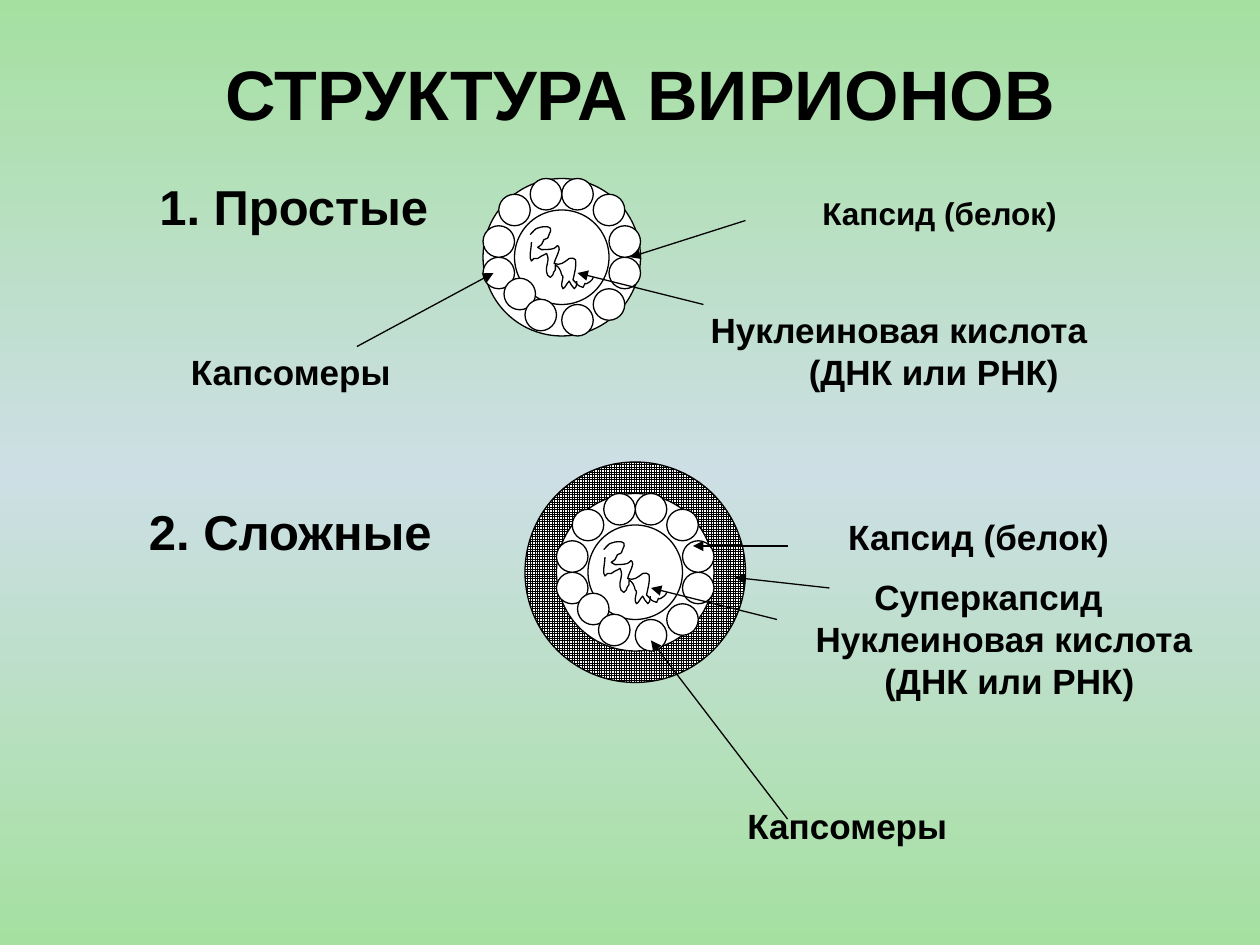
from copy import deepcopy

from lxml import etree
from pptx import Presentation
from pptx.dml.color import RGBColor
from pptx.enum.dml import MSO_PATTERN
from pptx.enum.shapes import MSO_CONNECTOR, MSO_SHAPE
from pptx.enum.text import MSO_ANCHOR, PP_ALIGN
from pptx.oxml.ns import qn
from pptx.util import Cm, Pt

OVAL, LINE = MSO_SHAPE.OVAL, MSO_CONNECTOR.STRAIGHT
GRID = MSO_PATTERN.SMALL_GRID
TOP, CENTER = MSO_ANCHOR.TOP, PP_ALIGN.CENTER
BLACK, WHITE = RGBColor(0, 0, 0), RGBColor(255, 255, 255)
GREEN, BLUE = RGBColor(0xA5, 0xE0, 0xA0), RGBColor(0xCD, 0xDF, 0xE5)
UNIT = 2.54 / 24  # one grid step in cm

TITLE = "СТРУКТУРА ВИРИОНОВ"
ACID, FORMS = "Нуклеиновая кислота", "(ДНК или РНК)"
CAPSID, PARTS = "Капсид (белок)", "Капсомеры"
# box, then lines of (left text, its size, offset, right text, its size)
LABELS = [
    ((28, 32.4, 194, 34.8), [("1. Простые", 28, 126.3, CAPSID, 18)]),
    ((34, 57.6, 186, 17.3), [("", 20, 99, ACID, 20), (PARTS, 20, 117.7, FORMS, 20)]),
    ((26, 94.3, 200, 26.6), [("2. Сложные", 28, 133.2, CAPSID, 20)]),
    ((140, 152, 52, 18.5), [(PARTS, 20, 0, "", 20)]),
    ((42, 108.5, 192, 41.5), [("", 20, 122.2, "Суперкапсид", 20),
                              ("", 20, 111, ACID, 20), ("", 20, 124.1, FORMS, 20)]),
]
# x and y of the start, then of the arrowhead
ARROWS = [
    (68, 66, 94, 52), (142, 42, 120, 49), (150, 104, 132, 104),
    (150, 156, 124, 122), (158, 112, 140, 110),
]
VIRIONS = [(92, 34), (106, 94)]
CAPSOMERES = [
    (0, 15), (4, 19), (8, 23), (24, 15), (24, 9), (21, 3),
    (15, 0), (9, 0), (3, 3), (0, 9), (15, 24), (21, 21),
]
# Bezier strands: a start, then two handles and an end for each curve
STRANDS = [
    [(0, 7), (6, 1), (3, 3), (9, 1), (11, 1), (14, 0), (16, 2),
     (17, 3), (16, 5), (15, 7), (14, 11), (13, 10), (11, 11),
     (10, 12), (10, 14), (9, 15), (6, 18), (4, 16), (9, 19),
     (12, 19), (16, 19), (19, 18), (21, 18), (21, 15), (22, 16),
     (23, 16), (23, 18), (23, 19), (22, 23), (20, 26), (19, 30),
     (24, 32), (27, 29), (31, 26), (33, 26), (35, 25), (36, 27),
     (37, 32), (35, 38), (34, 43), (40, 49), (37, 47), (42, 49),
     (46, 41), (40, 50), (48, 44), (49, 44), (50, 41), (50, 41)],
    [(1, 13), (1, 17), (0, 20), (0, 24), (0, 25), (0, 27), (1, 28),
     (1, 28), (2, 27), (3, 26), (4, 26), (5, 26), (6, 26),
     (8, 24), (10, 24), (13, 22), (15, 26), (14, 28), (13, 33),
     (13, 33), (12, 40), (16, 41), (16, 41), (17, 40), (18, 39),
     (18, 38), (19, 36), (20, 35), (20, 33), (20, 32), (20, 31),
     (23, 33), (24, 35), (25, 39), (26, 39), (26, 41), (26, 41),
     (26, 43), (25, 44), (25, 46), (25, 47), (25, 49), (26, 50),
     (27, 50), (28, 48), (28, 48), (29, 46), (31, 44), (31, 44),
     (32, 46), (33, 48), (35, 50), (36, 49), (37, 48), (37, 46),
     (37, 45), (37, 44), (37, 44)],
]


def grid(*steps):
    """Turn grid steps into lengths."""
    return [Cm(s * UNIT) for s in steps]


def style(item, **values):
    for name, value in values.items():
        setattr(item, name, value)


def ink(shape):
    shape.line.color.rgb = BLACK
    shape.line.width = Pt(0.75)


def disc(shapes, x, y, size):
    shape = shapes.add_shape(OVAL, *grid(x, y, size, size))
    shape.shadow.inherit = False
    shape.fill.solid()
    shape.fill.fore_color.rgb = WHITE
    ink(shape)
    return shape


def arrow(shapes, *ends):
    line = shapes.add_connector(LINE, *grid(*ends))
    ink(line)
    tip = etree.SubElement(line._element.spPr.find(qn("a:ln")), qn("a:tailEnd"))
    tip.set("type", "triangle")
    etree.SubElement(line._element.spPr, qn("a:effectLst"))


def strand(shapes, x, y, points):
    left, top = grid(x, y)
    nodes = [(left + Cm(px * 0.0254), top + Cm(py * 0.0254)) for px, py in points]
    pen = shapes.build_freeform(*nodes[0])
    pen.add_line_segments(nodes[1:], close=False)
    shape = pen.convert_to_shape()
    bend(shape)
    shape.shadow.inherit = False
    shape.fill.background()
    ink(shape)


def bend(shape):
    """Join each three line steps into one cubic curve."""
    steps = list(shape._element.iter(qn("a:lnTo")))
    for i in range(0, len(steps), 3):
        first, *rest = steps[i:i + 3]
        first.tag = qn("a:cubicBezTo")
        for step in rest:
            first.append(step[0])
            step.getparent().remove(step)


def virion(slide, x, y):
    shapes = slide.shapes.add_group_shape().shapes
    disc(shapes, x, y, 30)
    disc(shapes, x + 6, y + 6, 18)
    for points in STRANDS:
        strand(shapes, x + 9, y + 9, points)
    for dx, dy in CAPSOMERES:
        disc(shapes, x + dx, y + dy, 6)
    arrow(shapes, x + 42, y + 24, x + 18, y + 18)


def write(para, text, size):
    run = para.add_run()
    run.text = text
    style(run.font, name="Arial", size=Pt(size), bold=True)
    run.font.color.rgb = BLACK


def label(slide, place, lines):
    frame = slide.shapes.add_textbox(*grid(*place)).text_frame
    style(frame, word_wrap=True, vertical_anchor=TOP)
    for i, (left, size, gap, right, small) in enumerate(lines):
        para = frame.add_paragraph() if i else frame.paragraphs[0]
        props = para._p.get_or_add_pPr()
        offset = str(grid(gap)[0])
        if left and right:
            tabs = etree.SubElement(props, qn("a:tabLst"))
            etree.SubElement(tabs, qn("a:tab"), pos=offset, algn="l")
            write(para, left + "\t", size)
        elif left:
            write(para, left, size)
        else:
            props.set("marL", offset)
        if right:
            write(para, right, small)


def paint(slide):
    fill = slide.background.fill
    fill.gradient()
    fill.gradient_angle = 90
    first = slide._element.find(".//" + qn("a:gs"))
    first.addnext(deepcopy(first))
    for stop, place, color in zip(fill.gradient_stops, (0, 0.5, 1), (GREEN, BLUE, GREEN)):
        stop.position = place
        stop.color.rgb = color


def main():
    deck = Presentation()
    style(deck, slide_width=Cm(25.4), slide_height=Cm(19.05))
    slide = deck.slides.add_slide(deck.slide_layouts[5])
    paint(slide)

    title = slide.shapes.title
    left, top, width, height = grid(18, 8.4, 208, 34.3)
    style(title, left=left, top=top, width=width, height=height)
    title.text_frame.vertical_anchor = TOP
    para = title.text_frame.paragraphs[0]
    para.alignment = CENTER
    write(para, TITLE, 40)

    shell = disc(slide.shapes, 100, 88, 42)
    shell.fill.patterned()
    shell.fill.pattern = GRID
    shell.fill.fore_color.rgb = BLACK
    shell.fill.back_color.rgb = WHITE
    for spot in VIRIONS:
        virion(slide, *spot)
    for ends in ARROWS:
        arrow(slide.shapes, *ends)
    for place, lines in LABELS:
        label(slide, place, lines)
    deck.save("out.pptx")


if __name__ == "__main__":
    main()
